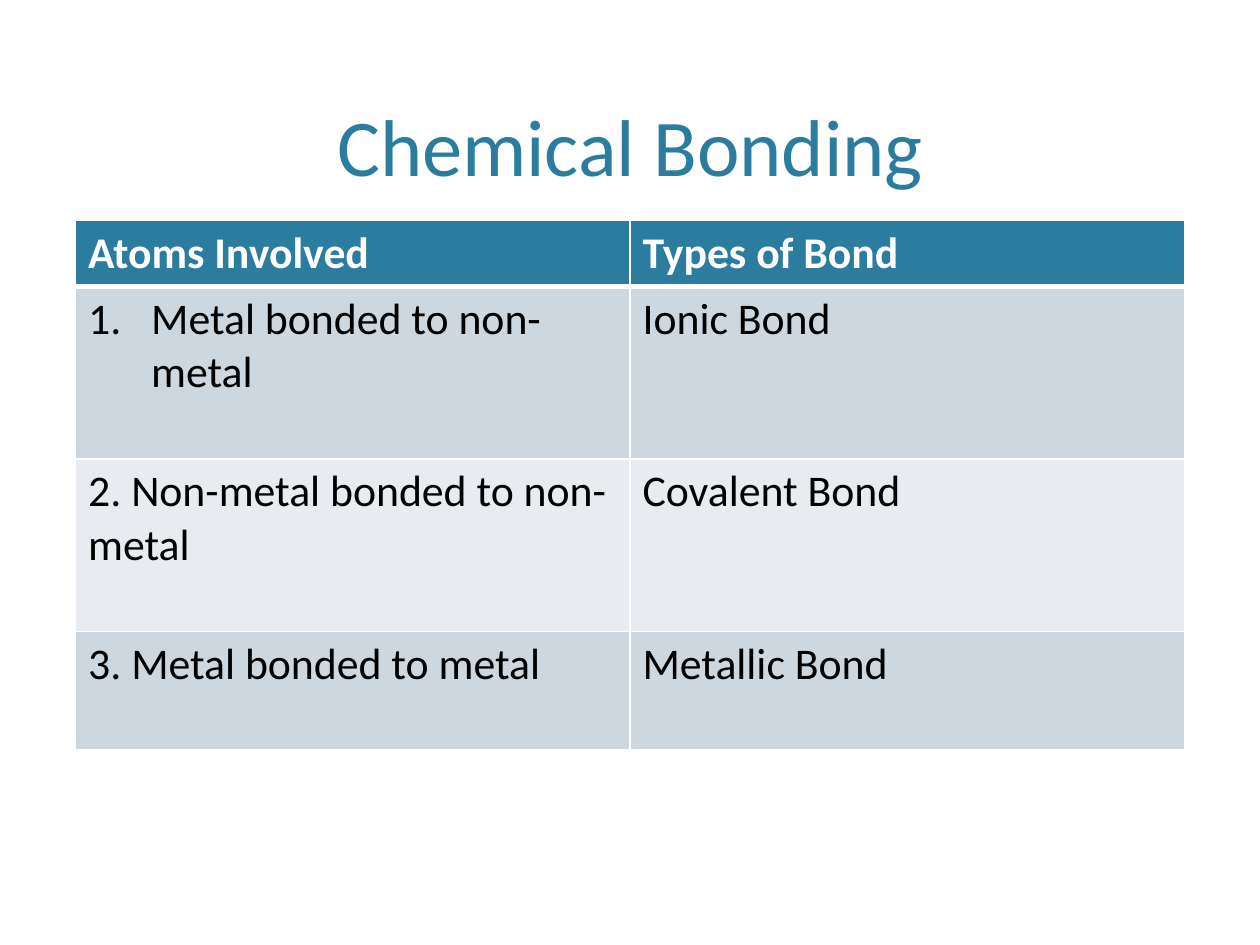
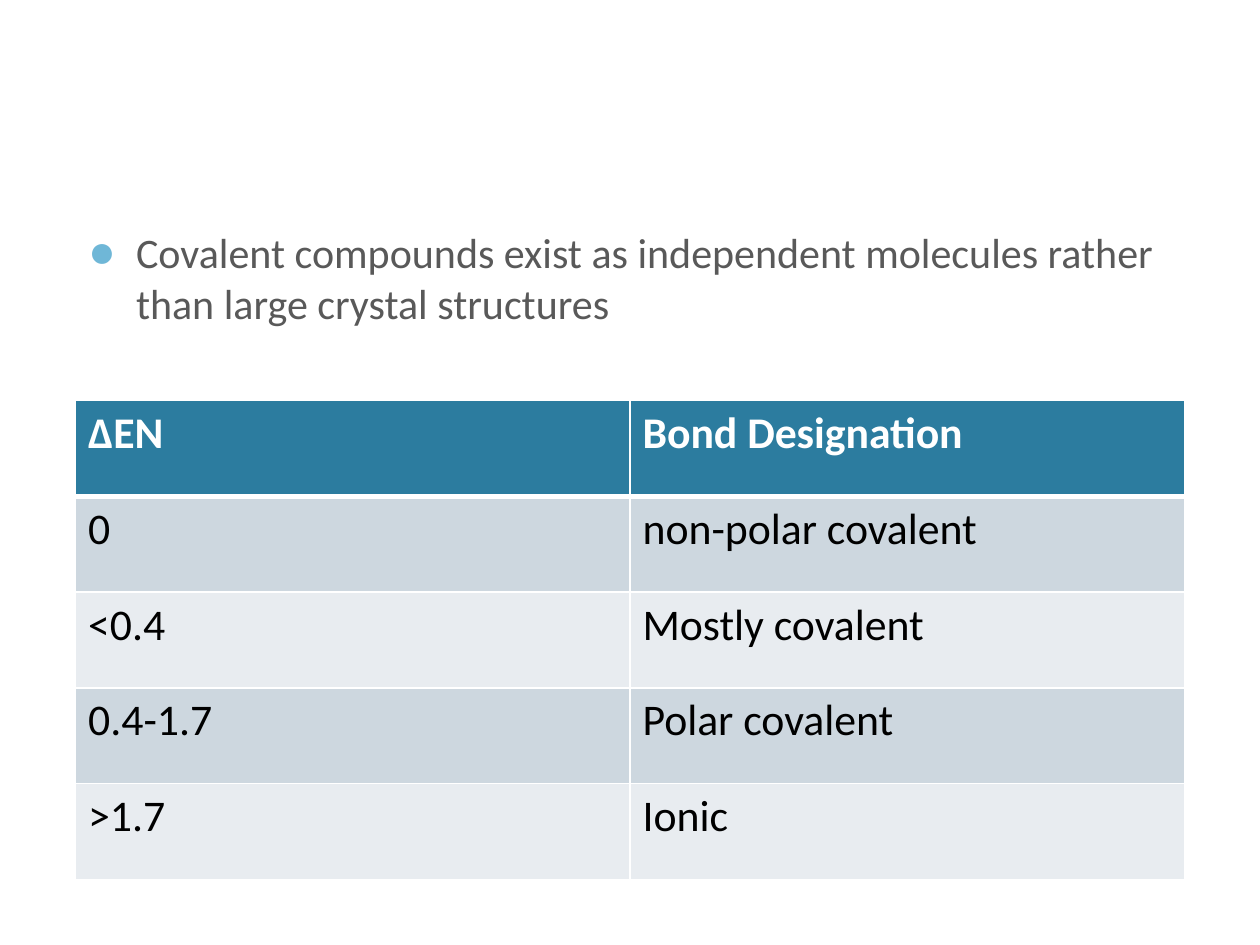
import pptx
import pptx.dml.color
import pptx.enum.text
import pptx.oxml
import pptx.oxml.ns
import pptx.util
from pptx.util import Inches

FONT = "Calibri"
TEAL, WHITE, BLACK = "2C7C9F", "FFFFFF", "000000"
BANDS = ["CDD7DF", "E8ECF0"]
BULLET_BLUE, BODY_GREY = "6FB7D7", "595959"
LEFT, CONTENT_TOP, WIDTH = 0.6, 1.75, 8.8
TITLE_AND_CONTENT, TITLE_ONLY = 1, 5


def color(hex_string):
    return pptx.dml.color.RGBColor.from_string(hex_string)


def xml_element(markup):
    return pptx.oxml.parse_xml(markup.replace(" ", f" {pptx.oxml.ns.nsdecls('a')} ", 1))


def place(shape, left, top, width, height):
    box = {"left": left, "top": top, "width": width, "height": height}
    for name, value in box.items():
        setattr(shape, name, Inches(value))


def write(text_frame, text, size, hex_color, bold=False):
    paragraph = text_frame.paragraphs[0]
    run = paragraph.add_run()
    run.text = text
    font_format = {"name": FONT, "size": pptx.util.Pt(size), "bold": bold}
    for name, value in font_format.items():
        setattr(run.font, name, value)
    run.font.color.rgb = color(hex_color)
    return paragraph


def hang(paragraph, indent, *markers):
    """Hang the paragraph from the given bullet elements."""
    properties = paragraph._p.get_or_add_pPr()
    properties.set("marL", str(Inches(indent)))
    properties.set("indent", str(-Inches(indent)))
    for markup in markers:
        properties.append(xml_element(markup))


def add_title(slide, text):
    title = slide.shapes.title
    place(title, LEFT, 0.12, WIDTH, 1.46)
    title.text_frame.auto_size = pptx.enum.text.MSO_AUTO_SIZE.NONE
    title.text_frame.vertical_anchor = pptx.enum.text.MSO_ANCHOR.BOTTOM
    paragraph = write(title.text_frame, text, 46, TEAL)
    paragraph.alignment = pptx.enum.text.PP_ALIGN.CENTER


def add_bullet_body(slide, text):
    body = slide.placeholders[1]
    place(body, LEFT, CONTENT_TOP, WIDTH, 4.75)
    body.text_frame.auto_size = pptx.enum.text.MSO_AUTO_SIZE.NONE
    paragraph = write(body.text_frame, text, 24, BODY_GREY)
    paragraph.space_before = pptx.util.Pt(20)
    hang(
        paragraph,
        0.38,
        f'<a:buClr ><a:srgbClr val="{BULLET_BLUE}"/></a:buClr>',
        '<a:buSzPct val="110000"/>',
        '<a:buChar char="●"/>',
    )


def set_borders(cell, **widths):
    """Draw white borders, one point wide unless a side is given."""
    properties = cell._tc.get_or_add_tcPr()
    for position, side in enumerate("LRTB"):
        width = pptx.util.Pt(widths.get(side, 1))
        line = xml_element(
            f'<a:ln{side} w="{width}"><a:solidFill>'
            f'<a:srgbClr val="{WHITE}"/></a:solidFill></a:ln{side}>'
        )
        properties.insert(position, line)


def add_banded_table(slide, top, row_heights, rows):
    frame = slide.shapes.add_table(
        len(rows), len(rows[0]), Inches(LEFT), Inches(top),
        Inches(WIDTH), Inches(sum(row_heights)),
    )
    table = frame.table
    for row_index, (height, texts) in enumerate(zip(row_heights, rows)):
        table.rows[row_index].height = Inches(height)
        header = row_index == 0
        for column_index, text in enumerate(texts):
            cell = table.cell(row_index, column_index)
            cell.fill.solid()
            cell.fill.fore_color.rgb = color(TEAL if header else BANDS[(row_index - 1) % 2])
            set_borders(cell, T=3 if row_index == 1 else 1, B=3 if header else 1)
            write(cell.text_frame, text, 25, WHITE if header else BLACK, bold=header)
    return table


def add_bonding_slide(presentation):
    slide = presentation.slides.add_slide(presentation.slide_layouts[TITLE_ONLY])
    add_title(slide, "Chemical Bonding")
    table = add_banded_table(slide, CONTENT_TOP, [0.52, 1.37, 1.37, 0.94], [
        ("Atoms Involved", "Types of Bond"),
        ("Metal bonded to non-metal", "Ionic Bond"),
        ("2. Non-metal bonded to non-metal", "Covalent Bond"),
        ("3. Metal bonded to metal", "Metallic Bond"),
    ])
    first_bond = table.cell(1, 0).text_frame.paragraphs[0]
    hang(first_bond, 0.5, '<a:buAutoNum type="arabicPeriod"/>')


def add_electronegativity_slide(presentation):
    slide = presentation.slides.add_slide(presentation.slide_layouts[TITLE_AND_CONTENT])
    title = slide.shapes.title._element
    title.getparent().remove(title)
    add_bullet_body(
        slide,
        "Covalent compounds exist as independent molecules "
        "rather than large crystal structures",
    )
    rows = [
        ("ΔEN", "Bond Designation"),
        ("0", "non-polar covalent"),
        ("<0.4", "Mostly covalent"),
        ("0.4-1.7", "Polar covalent"),
        (">1.7", "Ionic"),
    ]
    add_banded_table(slide, 3.18, [0.76] * len(rows), rows)


def main():
    presentation = pptx.Presentation()
    presentation.slide_width = Inches(10)
    presentation.slide_height = Inches(7.5)
    add_bonding_slide(presentation)
    add_electronegativity_slide(presentation)
    presentation.save("out.pptx")


if __name__ == "__main__":
    main()
